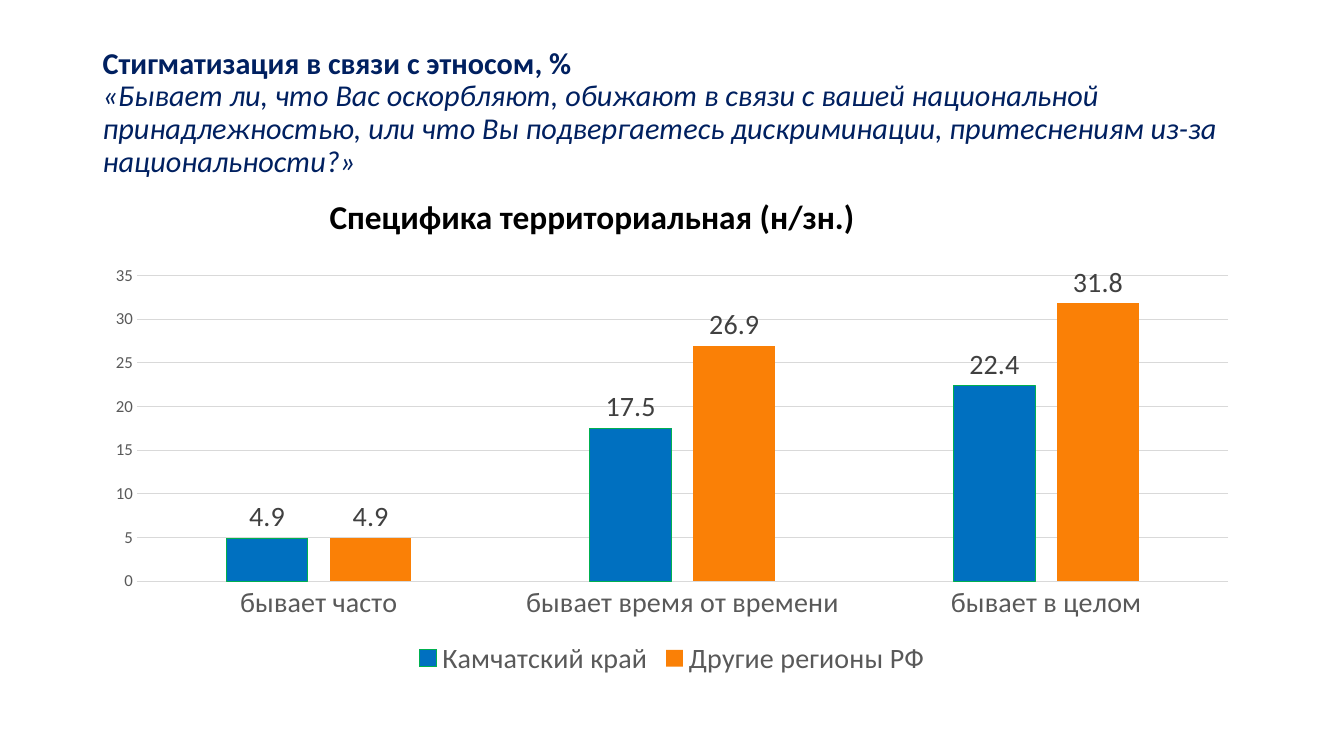
from pptx import Presentation
from pptx.chart.data import CategoryChartData
from pptx.dml.color import RGBColor
from pptx.enum.chart import XL_CHART_TYPE as ChartType
from pptx.enum.chart import XL_LABEL_POSITION as LabelPosition
from pptx.enum.chart import XL_LEGEND_POSITION as LegendPosition
from pptx.enum.chart import XL_TICK_MARK as TickMark
from pptx.enum.text import MSO_ANCHOR
from pptx.util import Inches, Pt

FONT = "Calibri"
NAVY = RGBColor(0x00, 0x20, 0x60)
BLACK = RGBColor(0x00, 0x00, 0x00)
DARK_GREY = RGBColor(0x40, 0x40, 0x40)
GREY = RGBColor(0x59, 0x59, 0x59)
LIGHT_GREY = RGBColor(0xD9, 0xD9, 0xD9)
BLUE = RGBColor(0x00, 0x70, 0xC0)
GREEN = RGBColor(0x00, 0xB0, 0x50)
ORANGE = RGBColor(0xFA, 0x80, 0x06)


def style(font, size, color, bold=False, italic=False):
    font.name, font.size, font.color.rgb = FONT, Pt(size), color
    font.bold, font.italic = bold, italic


def add_paragraph_box(slide, area, text, spacing):
    """Add a wrapping text box with one paragraph; return the box and paragraph."""
    box = slide.shapes.add_textbox(*area)
    box.text_frame.word_wrap = True
    para = box.text_frame.paragraphs[0]
    para.text = text
    para.line_spacing = spacing
    return box, para


deck = Presentation()
deck.slide_width, deck.slide_height = Inches(13.33), Inches(7.5)
page = deck.slides.add_slide(deck.slide_layouts[6])

margin = Inches(0.92)
content_width = deck.slide_width - 2 * margin

# Heading and survey question
title, para = add_paragraph_box(
    page, (margin, Inches(0.4), content_width, Inches(1.45)),
    "Стигматизация в связи с этносом, %\v"
    "«Бывает ли, что Вас оскорбляют, обижают в связи с вашей национальной "
    "принадлежностью, или что Вы подвергаетесь дискриминации, притеснениям "
    "из-за национальности?»", 0.9)
title.text_frame.vertical_anchor = MSO_ANCHOR.MIDDLE
heading, question = para.runs
style(heading.font, 21.6, NAVY, bold=True)
style(question.font, 21.6, NAVY, italic=True)

# Chart data
data = CategoryChartData()
data.categories = ["бывает часто", "бывает время от времени", "бывает в целом"]
data.add_series("Камчатский край", (4.9, 17.5, 22.4))
data.add_series("Другие регионы РФ", (4.9, 26.9, 31.8))
chart = page.shapes.add_chart(
    ChartType.COLUMN_CLUSTERED, margin, Inches(2.55), content_width,
    Inches(4.21), data).chart
chart.has_title = False
style(chart.font, 10, BLACK)

# Columns and their labels
plot = chart.plots[0]
plot.gap_width, plot.overlap, plot.vary_by_categories = 219, -27, False
for series, color in zip(plot.series, (BLUE, ORANGE)):
    series.format.fill.solid()
    series.format.fill.fore_color.rgb = color
    labels = series.data_labels
    labels.show_value = True
    labels.position = LabelPosition.OUTSIDE_END
    style(labels.font, 20, DARK_GREY)
kamchatka, other_regions = plot.series
kamchatka.format.line.color.rgb = GREEN
kamchatka.format.line.width = Pt(0.75)
other_regions.format.line.fill.background()

# Axes, grid and legend
categories, values = chart.category_axis, chart.value_axis
for axis, size in ((categories, 20), (values, 12)):
    axis.major_tick_mark = axis.minor_tick_mark = TickMark.NONE
    style(axis.tick_labels.font, size, GREY)
values.minimum_scale, values.maximum_scale, values.major_unit = 0, 35, 5
values.format.line.fill.background()
for line in (categories.format.line, values.major_gridlines.format.line):
    line.color.rgb = LIGHT_GREY
    line.width = Pt(0.75)
chart.has_legend = True
chart.legend.position = LegendPosition.BOTTOM
chart.legend.include_in_layout = False
style(chart.legend.font, 20, GREY)

# Chart caption
caption, para = add_paragraph_box(
    page, (Inches(3.17), Inches(1.97), Inches(5.64), Inches(0.47)),
    "Специфика территориальная (н/зн.)", 0.8)
para.space_before = Pt(10)
style(para.runs[0].font, 23.8, BLACK, bold=True)

deck.save("out.pptx")
